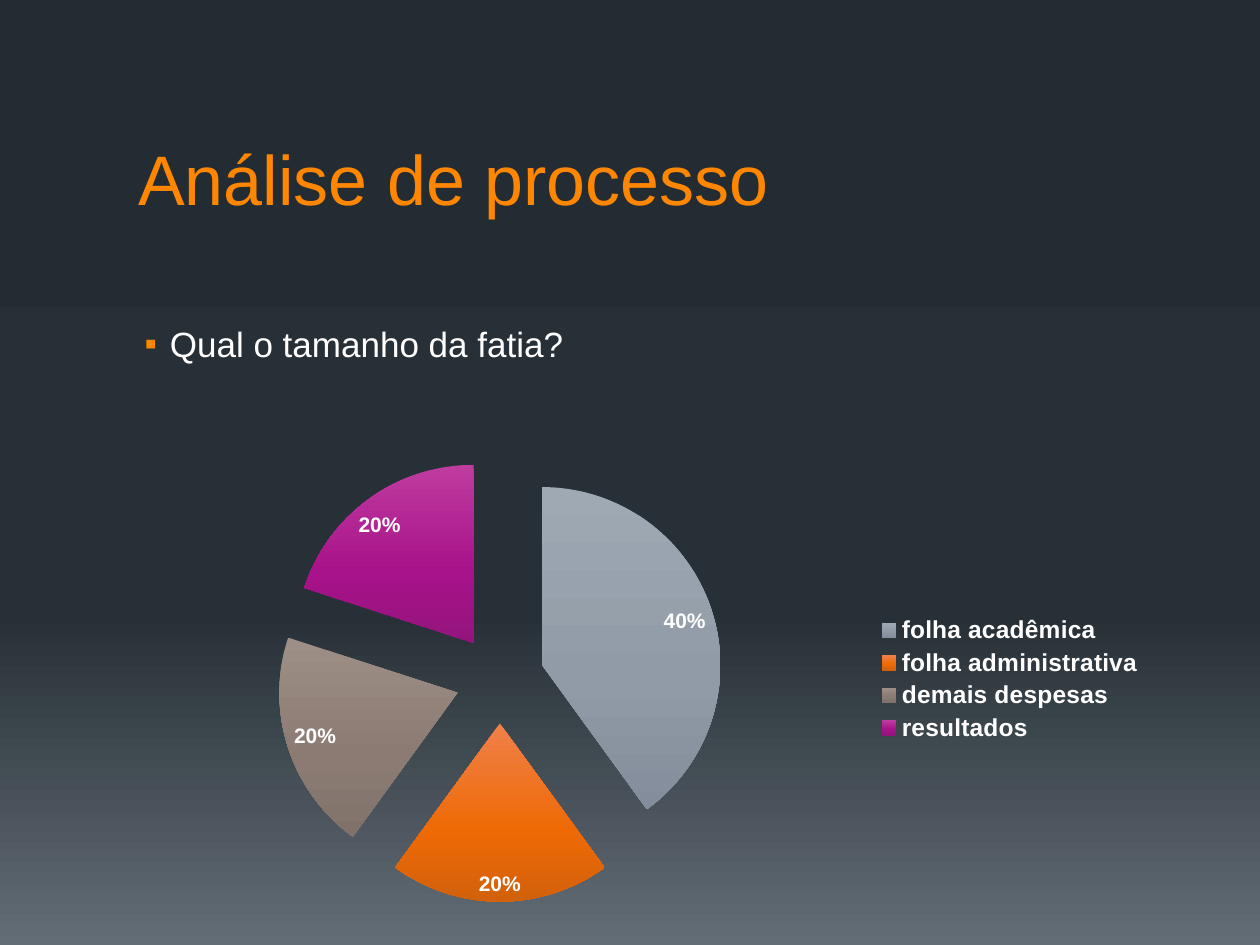
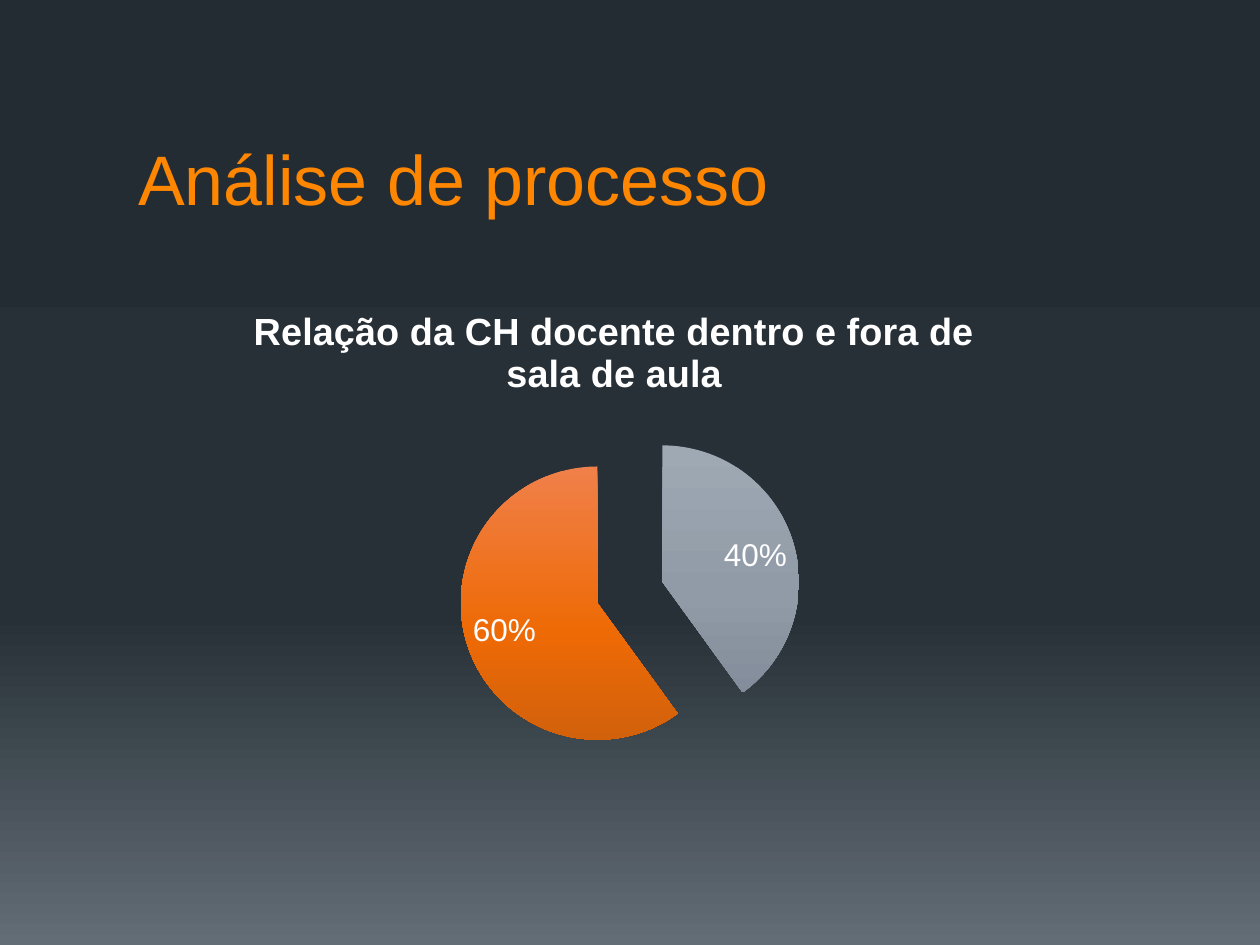
import pptx
import pptx.chart.data
import pptx.dml.color
import pptx.enum.chart
import pptx.enum.text
import pptx.oxml
import pptx.oxml.ns
import pptx.util

EMU_PER_PX = 914400 / 126
FONT = "Arial"
COLORS = {"title": "FF8600", "text": "FFFFFF"}
BACKGROUND = [(0, "242C33"), (65, "273037"), (100, "636D76")]
SLICES = [
    ("9FA9B4", "919BA7", "838D9B"),
    ("F0804A", "EE6A05", "D2610C"),
    ("9D8E86", "8B7B73", "80716A"),
    ("BF3C9F", "A8128A", "94147C"),
]
SLICE_STOPS = (0, 60, 100)
TITLE_BOX = (126, 67, 1008, 159)
QUESTION_BOX = (126, 316, 1008, 553)
SHARES_BOX = (126, 439, 1030, 480)
HOURS_BOX = (126, 295, 1008, 488)


def px(box):
    return [pptx.util.Emu(round(n * EMU_PER_PX)) for n in box]


def style(font, size, color="text", bold=False):
    font.name = FONT
    font.size = pptx.util.Pt(size)
    font.bold = bold
    font.color.rgb = pptx.dml.color.RGBColor.from_string(COLORS[color])


def sub(parent, tag, **attrs):
    el = pptx.oxml.parse_xml(f"<{tag} {pptx.oxml.ns.nsdecls(tag.split(':')[0])}/>")
    for name, value in attrs.items():
        el.set(name, str(value))
    parent.append(el)
    return el


def fill_gradient(fill, root, stops):
    fill.gradient()
    fill.gradient_angle = 270
    stop_list = root.findall(".//" + pptx.oxml.ns.qn("a:gsLst"))[-1]
    for old in list(stop_list):
        stop_list.remove(old)
    for position, color in stops:
        sub(sub(stop_list, "a:gs", pos=position * 1000), "a:srgbClr", val=color)


def add_text(s, box, text, size, color, anchor):
    tf = s.shapes.add_textbox(*px(box)).text_frame
    tf.word_wrap = True
    tf.vertical_anchor = anchor
    tf.text = text
    p = tf.paragraphs[0]
    style(p.runs[0].font, size, color)
    return p


def add_title(s, box, text):
    add_text(s, box, text, 40, "title", pptx.enum.text.MSO_ANCHOR.BOTTOM)


def add_bullet(s, box, text):
    p = add_text(s, box, text, 20, "text", pptx.enum.text.MSO_ANCHOR.TOP)
    pPr = p._p.get_or_add_pPr()
    pPr.set("marL", str(pptx.util.Inches(0.25)))
    pPr.set("indent", str(pptx.util.Inches(-0.2)))
    sub(sub(pPr, "a:buClr"), "a:srgbClr", val=COLORS["title"])
    sub(pPr, "a:buFont", typeface=FONT)
    sub(pPr, "a:buChar", char="▪")


def place_part(part, **fractions):
    layout = part.find(pptx.oxml.ns.qn("c:layout"))
    if layout is None:
        layout = sub(part, "c:layout")
    for old in list(layout):
        layout.remove(old)
    manual = sub(layout, "c:manualLayout")
    if "w" in fractions:
        sub(manual, "c:layoutTarget", val="inner")
    for mode in ("xMode", "yMode"):
        sub(manual, f"c:{mode}", val="edge")
    for name, value in fractions.items():
        sub(manual, f"c:{name}", val=value)
    return layout


def add_pie(s, box, categories, values, size, label_size, bold=False):
    data = pptx.chart.data.CategoryChartData(number_format="0%")
    data.categories = categories
    data.add_series("Series 1", values)
    kind = pptx.enum.chart.XL_CHART_TYPE.PIE
    chart = s.shapes.add_chart(kind, *px(box), data).chart
    style(chart.font, size)
    chart.has_title = False
    chart.has_legend = False
    plot = chart.plots[0]
    plot.vary_by_categories = True
    series = plot.series[0]
    for i in range(len(values)):
        fill = series.points[i].format.fill
        fill_gradient(fill, chart.element, zip(SLICE_STOPS, SLICES[i]))
    first_point = chart.element.find(".//" + pptx.oxml.ns.qn("c:dPt"))
    explosion = sub(first_point.getparent(), "c:explosion", val=25)
    first_point.addprevious(explosion)
    plot.has_data_labels = True
    labels = plot.data_labels
    labels.show_value = True
    labels.show_percentage = False
    labels.number_format = "0%"
    labels.number_format_is_linked = False
    labels.position = pptx.enum.chart.XL_LABEL_POSITION.BEST_FIT
    style(labels.font, label_size, bold=bold)
    return chart


def add_slide(prs, title):
    s = prs.slides.add_slide(prs.slide_layouts[6])
    fill_gradient(s.background.fill, s.element, BACKGROUND)
    add_title(s, TITLE_BOX, title)
    return s


def build_shares_slide(prs):
    s = add_slide(prs, "Análise de processo")
    add_bullet(s, QUESTION_BOX, "Qual o tamanho da fatia?")
    categories = ["folha acadêmica", "folha administrativa", "demais despesas", "resultados"]
    chart = add_pie(s, SHARES_BOX, categories, [0.4, 0.2, 0.2, 0.2], 10, 12, True)
    chart.has_legend = True
    chart.legend.position = pptx.enum.chart.XL_LEGEND_POSITION.RIGHT
    chart.legend.include_in_layout = False
    style(chart.legend.font, 14, bold=True)


def build_hours_slide(prs):
    s = add_slide(prs, "Análise de processo")
    chart = add_pie(s, HOURS_BOX, ["1", "2"], [0.4, 0.6], 18, 18)
    chart.has_title = True
    tf = chart.chart_title.text_frame
    tf.text = "Relação da CH docente dentro e fora de sala de aula"
    style(tf.paragraphs[0].runs[0].font, 21.6, bold=True)
    chart.chart_title.include_in_layout = False
    title = chart.element.find(".//" + pptx.oxml.ns.qn("c:title"))
    title_layout = place_part(title, x=0.12, y=0.01)
    title.find(pptx.oxml.ns.qn("c:tx")).addnext(title_layout)
    plot_area = chart.element.find(".//" + pptx.oxml.ns.qn("c:plotArea"))
    plot_layout = place_part(plot_area, x=0.33, y=0.26, w=0.34, h=0.7)
    plot_area.insert(0, plot_layout)


def main():
    prs = pptx.Presentation()
    prs.slide_width, prs.slide_height = px((1260, 945))
    build_shares_slide(prs)
    build_hours_slide(prs)
    prs.save("out.pptx")


if __name__ == "__main__":
    main()
